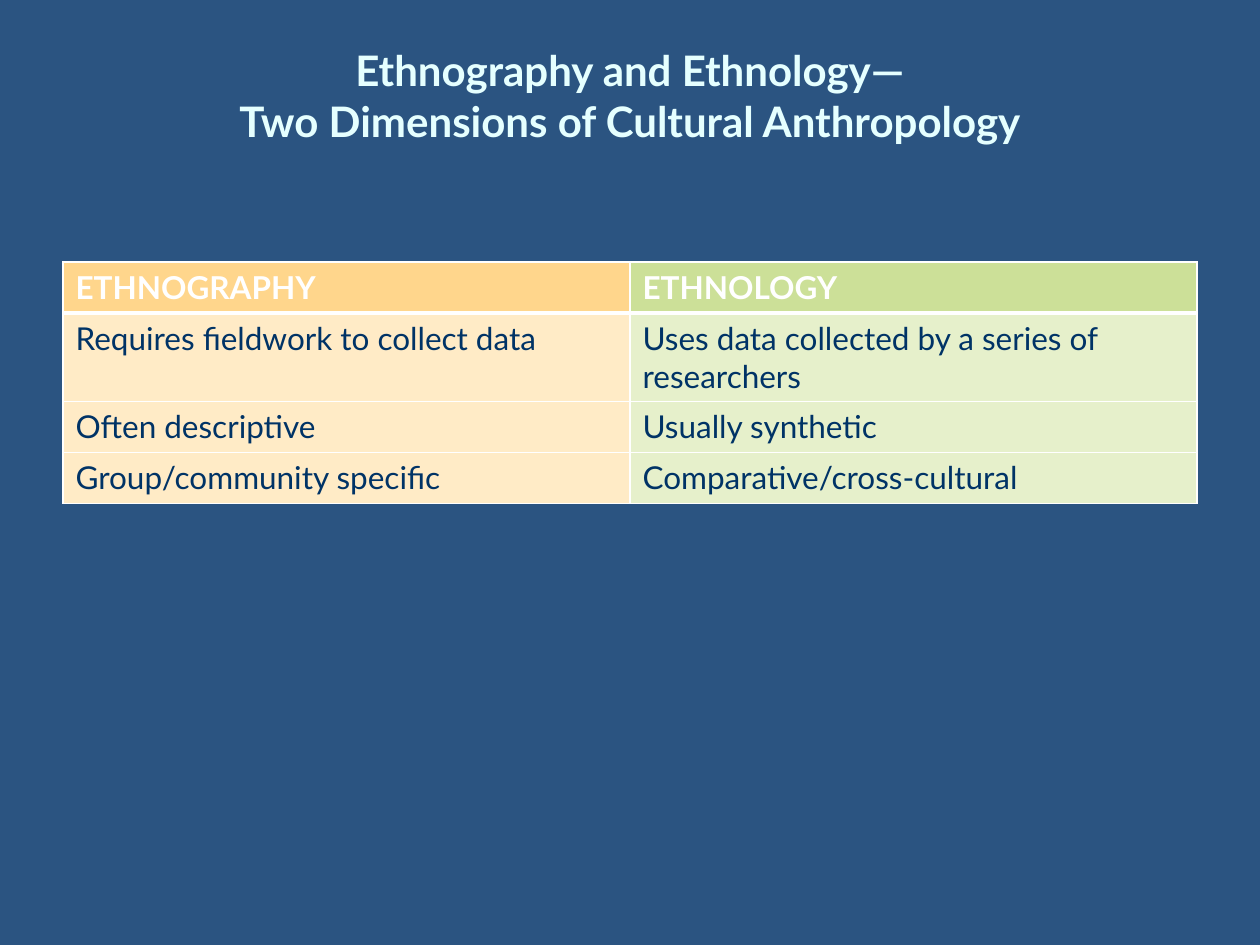
from lxml.etree import SubElement
from pptx import Presentation
from pptx.dml.color import RGBColor
from pptx.enum.text import MSO_ANCHOR, PP_ALIGN
from pptx.oxml.ns import qn
from pptx.util import Emu, Pt

FONT = "Lato"
COLORS = {
    "background": "2B5481",
    "title": "E5FFFF",
    "border": "FFFFFF",
    "header_text": "FFFFFF",
    "body_text": "003366",
}
HEADER_FILLS = ["FFD68C", "CCE098"]
BODY_FILLS = ["FFEBC6", "E6F0CB"]
ROWS = [
    ["ETHNOGRAPHY", "ETHNOLOGY"],
    ["Requires fieldwork to collect data", "Uses data collected by a series of researchers"],
    ["Often descriptive", "Usually synthetic"],
    ["Group/community specific", "Comparative/cross-cultural"],
]


def px(length):
    return Emu(round(length * 914400 / 126))


def set_font(paragraph, size, color, bold):
    font = paragraph.font
    font.name = FONT
    font.size = Pt(size)
    font.bold = bold
    font.color.rgb = RGBColor.from_string(color)


def add_title(slide, left, top, width, height, text):
    frame = slide.shapes.add_textbox(px(left), px(top), px(width), px(height)).text_frame
    frame.word_wrap = True
    frame.vertical_anchor = MSO_ANCHOR.MIDDLE
    paragraph = frame.paragraphs[0]
    paragraph.text = text
    paragraph.alignment = PP_ALIGN.CENTER
    set_font(paragraph, 24, COLORS["title"], True)


def set_borders(cell, top, bottom):
    properties = cell._tc.get_or_add_tcPr()
    for tag, points in (("a:lnL", 1), ("a:lnR", 1), ("a:lnT", top), ("a:lnB", bottom)):
        line = SubElement(properties, qn(tag), w=str(Pt(points)))
        fill = SubElement(line, qn("a:solidFill"))
        SubElement(fill, qn("a:srgbClr"), val=COLORS["border"])


def add_comparison(slide, left, top, width, row_height, rows):
    columns = len(rows[0])
    table = slide.shapes.add_table(
        len(rows), columns, px(left), px(top), px(width), px(row_height * len(rows))
    ).table
    for column in table.columns:
        column.width = px(width // columns)
    for row_index, texts in enumerate(rows):
        table.rows[row_index].height = px(row_height)
        header = row_index == 0
        fills = HEADER_FILLS if header else BODY_FILLS
        color = COLORS["header_text" if header else "body_text"]
        for column_index, text in enumerate(texts):
            cell = table.cell(row_index, column_index)
            set_borders(cell, 3 if row_index == 1 else 1, 3 if header else 1)
            cell.fill.solid()
            cell.fill.fore_color.rgb = RGBColor.from_string(fills[column_index])
            cell.text = text
            set_font(cell.text_frame.paragraphs[0], 18, color, header)


def main():
    presentation = Presentation()
    presentation.slide_width, presentation.slide_height = px(1260), px(945)
    slide = presentation.slides.add_slide(presentation.slide_layouts[6])
    background = slide.background.fill
    background.solid()
    background.fore_color.rgb = RGBColor.from_string(COLORS["background"])
    add_title(slide, 126, 53, 1008, 84,
              "Ethnography and Ethnology—\vTwo Dimensions of Cultural Anthropology")
    add_comparison(slide, 63, 262, 1134, 51, ROWS)
    presentation.save("out.pptx")


if __name__ == "__main__":
    main()
